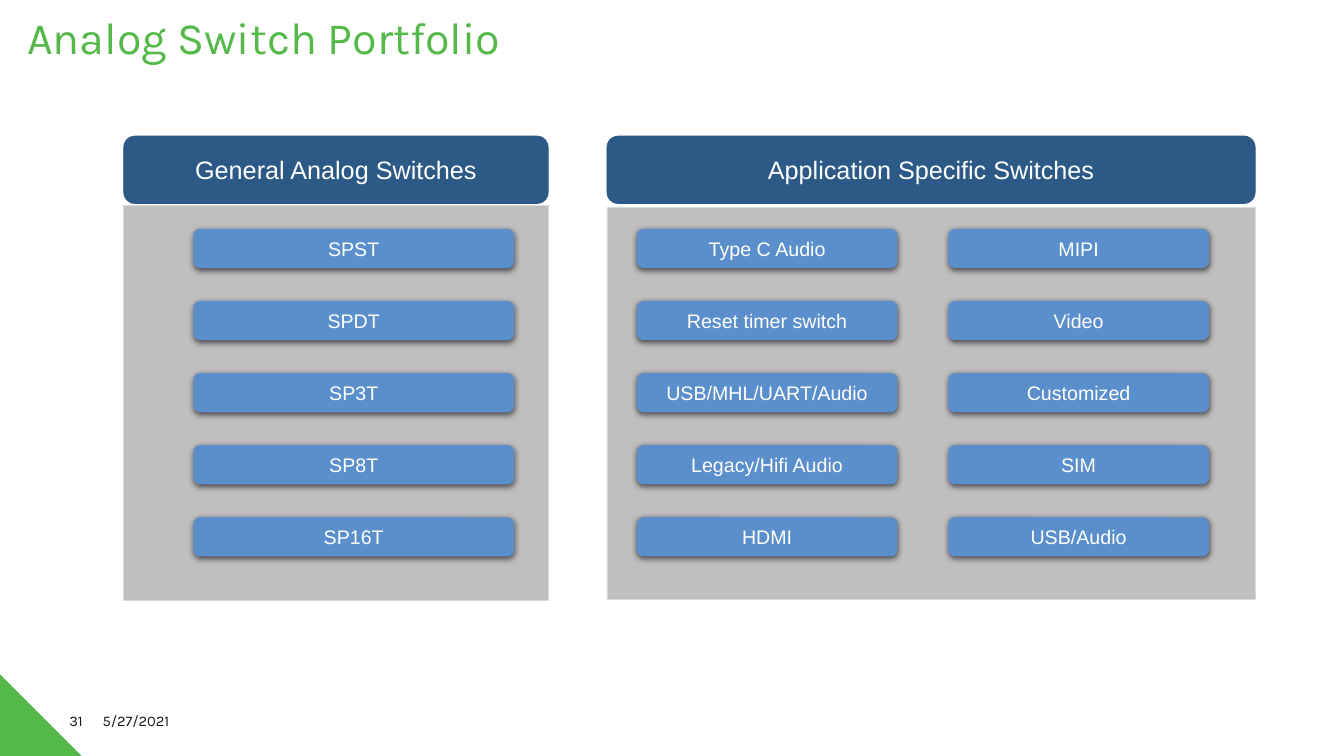
import pptx
import pptx.util
import pptx.dml.color
import pptx.enum.shapes
import pptx.enum.text
import pptx.oxml
import pptx.oxml.ns

Pt = pptx.util.Pt
RGBColor = pptx.dml.color.RGBColor
MSO_SHAPE = pptx.enum.shapes.MSO_SHAPE
PP_ALIGN = pptx.enum.text.PP_ALIGN
MSO_ANCHOR = pptx.enum.text.MSO_ANCHOR

GREEN = RGBColor(0x54, 0xB9, 0x48)
INK = RGBColor(0x18, 0x18, 0x18)
WHITE = RGBColor(0xFF, 0xFF, 0xFF)
NAVY = RGBColor(0x2C, 0x59, 0x85)
BLUE = RGBColor(0x5B, 0x8F, 0xCB)
GREY = RGBColor(0xBF, 0xBF, 0xBF)
PALE_GREY = RGBColor(0xD9, 0xD9, 0xD9)

SOFT_SHADOW = (
    f'<a:outerShdw {pptx.oxml.ns.nsdecls("a")} blurRad="{Pt(4.5)}" dist="{Pt(1.5)}" '
    'dir="5400000" algn="t" rotWithShape="0">'
    '<a:srgbClr val="000000"><a:alpha val="63000"/></a:srgbClr></a:outerShdw>'
)

FIRST_ROW, ROW_PITCH, BUTTON_HEIGHT = 163.5, 51.5, 28
HEADER_TOP, HEADER_HEIGHT = 97.2, 48.2

# Left, top, width and height of each panel; its button columns as (left, width, names)
PANELS = [
    ("General Analog Switches", (88.4, 147, 303.2, 282), [
        (138.2, 229, ["SPST", "SPDT", "SP3T", "SP8T", "SP16T"]),
    ]),
    ("Application Specific Switches", (433.6, 148.4, 463, 280), [
        (455, 186, ["Type C Audio", "Reset timer switch", "USB/MHL/UART/Audio",
                    "Legacy/Hifi Audio", "HDMI"]),
        (677.5, 186, ["MIPI", "Video", "Customized", "SIM", "USB/Audio"]),
    ]),
]


def write(frame, text, size, font="Arial", color=WHITE, align=PP_ALIGN.CENTER, spacing=1.0):
    frame.word_wrap = True
    frame.vertical_anchor = MSO_ANCHOR.MIDDLE
    paragraph = frame.paragraphs[0]
    paragraph.alignment = align
    paragraph.line_spacing = spacing
    run = paragraph.add_run()
    run.text = text
    run.font.size = Pt(size)
    run.font.name = font
    run.font.color.rgb = color


class SwitchSlide:
    label_font = "Karla"

    def __init__(self, slide):
        self.shapes = slide.shapes

    def paint(self, shape, fill, line=None):
        shape.shadow.inherit = False
        shape.fill.solid()
        shape.fill.fore_color.rgb = fill
        if line is None:
            shape.line.fill.background()
        else:
            shape.line.color.rgb = line
            shape.line.width = Pt(0.5)

    def block(self, kind, box, fill, line=None):
        shape = self.shapes.add_shape(kind, *map(Pt, box))
        self.paint(shape, fill, line)
        return shape

    def label(self, text, box, size, **style):
        frame = self.shapes.add_textbox(*map(Pt, box)).text_frame
        write(frame, text, size, font=self.label_font, **style)

    def corner(self, width, top, bottom):
        outline = self.shapes.build_freeform(Pt(0), Pt(top))
        outline.add_line_segments([(Pt(width), Pt(bottom)), (Pt(0), Pt(bottom))])
        self.paint(outline.convert_to_shape(), GREEN)

    def panel(self, box):
        self.block(MSO_SHAPE.RECTANGLE, box, GREY, PALE_GREY)

    def header(self, text, left, width):
        box = (left, HEADER_TOP, width, HEADER_HEIGHT)
        header = self.block(MSO_SHAPE.ROUNDED_RECTANGLE, box, NAVY, NAVY)
        write(header.text_frame, text, 18)

    def button(self, text, left, top, width):
        box = (left, top, width, BUTTON_HEIGHT)
        button = self.block(MSO_SHAPE.ROUNDED_RECTANGLE, box, BLUE)
        effects = button._element.spPr.find(pptx.oxml.ns.qn("a:effectLst"))
        effects.append(pptx.oxml.parse_xml(SOFT_SHADOW))
        write(button.text_frame, text, 14)


def main():
    deck = pptx.Presentation()
    deck.slide_width, deck.slide_height = Pt(960), Pt(540)
    portfolio = SwitchSlide(deck.slides.add_slide(deck.slide_layouts[6]))

    # Corner, title and footer
    portfolio.corner(58.3, 481.7, 540)
    portfolio.label("Analog Switch Portfolio", (12.4, -1.4, 648, 59.8), 32,
                    color=GREEN, align=PP_ALIGN.LEFT, spacing=0.9)
    portfolio.label("5/27/2021", (66.2, 500.4, 216, 28.8), 10.5,
                    color=INK, align=PP_ALIGN.LEFT)
    portfolio.label("31", (13.7, 500.4, 52.5, 28.8), 10.5,
                    color=INK, align=PP_ALIGN.RIGHT)

    # Switch families
    for family, panel_box, columns in PANELS:
        portfolio.panel(panel_box)
        portfolio.header(family, panel_box[0], panel_box[2])
        for left, width, switches in columns:
            for row, switch in enumerate(switches):
                portfolio.button(switch, left, FIRST_ROW + row * ROW_PITCH, width)

    deck.save("out.pptx")


if __name__ == "__main__":
    main()
